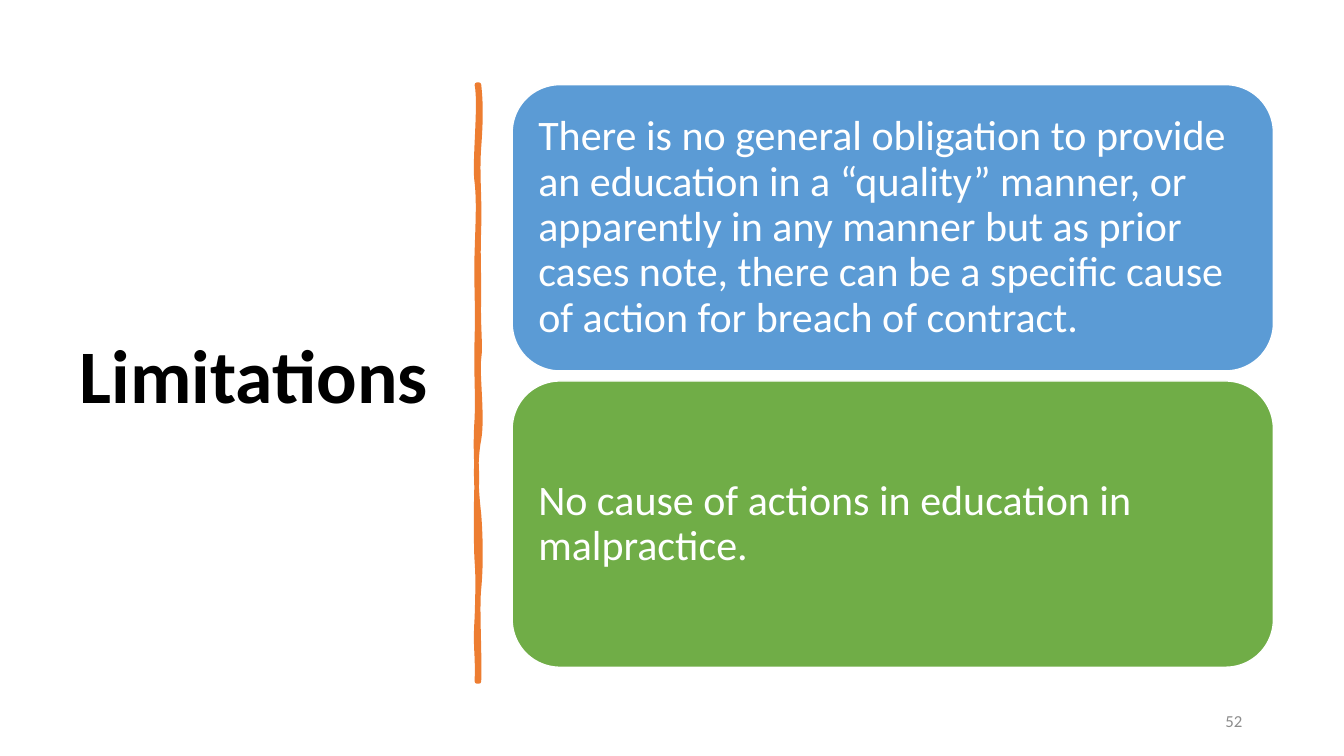
from dataclasses import dataclass

from lxml.etree import SubElement
from pptx import Presentation
from pptx.dml.color import RGBColor
from pptx.enum.shapes import MSO_SHAPE as Shape
from pptx.enum.text import MSO_ANCHOR as Anchor, MSO_AUTO_SIZE as AutoSize, PP_ALIGN as Align
from pptx.oxml.ns import qn
from pptx.util import Inches, Pt


@dataclass(frozen=True)
class Theme:
    font: str = "Calibri"
    black: str = "000000"
    white: str = "FFFFFF"
    grey: str = "8C8C8C"
    orange: str = "ED7D31"
    blue: str = "5B9BD5"
    green: str = "70AD47"
    title_size: int = 54
    card_size: int = 30
    number_size: int = 12


THEME = Theme()

# Content
TITLE = "Limitations"
PAGE_NUMBER = "52"
CARDS = [
    ("There is no general obligation to provide an education in a “quality” manner, "
     "or apparently in any manner but as prior cases note, there can be a specific "
     "cause of action for breach of contract.", THEME.blue),
    ("No cause of actions in education in malpractice.", THEME.green),
]

# Hand-drawn divider: start point, then curves of two controls and an end
DIVIDER_START = (4.75, 0.84)
DIVIDER_CURVES = [
    (4.77, 1.02, 4.77, 1.19, 4.75, 1.46),
    (4.73, 1.73, 4.76, 1.95, 4.75, 2.26),
    (4.74, 2.57, 4.75, 2.62, 4.75, 2.94),
    (4.74, 3.25, 4.77, 3.42, 4.75, 3.56),
    (4.73, 3.70, 4.79, 4.14, 4.75, 4.36),
    (4.71, 4.57, 4.72, 4.84, 4.75, 5.10),
    (4.77, 5.36, 4.77, 5.64, 4.75, 5.84),
    (4.73, 6.03, 4.76, 6.50, 4.75, 6.76),
    (4.74, 6.76, 4.73, 6.76, 4.73, 6.76),
    (4.74, 6.46, 4.71, 6.44, 4.73, 6.13),
    (4.74, 5.83, 4.74, 5.70, 4.73, 5.57),
    (4.72, 5.44, 4.72, 4.95, 4.73, 4.77),
    (4.73, 4.59, 4.71, 4.45, 4.73, 4.15),
    (4.74, 3.86, 4.72, 3.73, 4.73, 3.35),
    (4.74, 2.98, 4.72, 2.81, 4.73, 2.50),
    (4.74, 2.18, 4.75, 2.00, 4.73, 1.81),
    (4.70, 1.63, 4.77, 1.04, 4.73, 0.84),
    (4.74, 0.84, 4.74, 0.84, 4.75, 0.84),
]

# Layout, in inches
CARD_LEFT, CARD_TOP, CARD_W, CARD_H, CARD_GAP = 5.08, 0.84, 7.55, 2.84, 0.1


def rgb(value):
    return RGBColor.from_string(value)


def place(sp, *box):
    sp.left, sp.top, sp.width, sp.height = map(Inches, box)


def write(sp, text, *, size, color, bold=False, align=Align.LEFT, spacing=1.0, inset=None):
    tf = sp.text_frame
    tf.word_wrap = True
    tf.auto_size = AutoSize.NONE
    tf.vertical_anchor = Anchor.MIDDLE
    if inset is not None:
        tf.margin_left = tf.margin_top = tf.margin_right = tf.margin_bottom = Inches(inset)
    p = tf.paragraphs[0]
    p.alignment, p.line_spacing = align, spacing
    r = p.add_run()
    r.text = text
    r.font.name, r.font.size, r.font.bold = THEME.font, Pt(size), bold
    r.font.color.rgb = rgb(color)


def paint(sp, fill, line, width):
    sp.shadow.inherit = False
    sp.fill.solid()
    sp.fill.fore_color.rgb = rgb(fill)
    sp.line.color.rgb = rgb(line)
    sp.line.width = Pt(width)


def add_curves(s, start, curves):
    points = [(Inches(c[k]), Inches(c[k + 1])) for c in curves for k in (0, 2, 4)]
    builder = s.shapes.build_freeform(*map(Inches, start))
    builder.add_line_segments(points, close=True)
    sp = builder.convert_to_shape()
    # Turn every three straight segments into one Bézier curve
    segments = list(sp.element.iter(qn("a:lnTo")))
    outline = segments[0].getparent()
    close = outline.find(qn("a:close"))
    for k in range(0, len(segments), 3):
        curve = SubElement(outline, qn("a:cubicBezTo"))
        for segment in segments[k:k + 3]:
            curve.append(segment[0])
            outline.remove(segment)
    outline.append(close)
    return sp


def main():
    prs = Presentation()
    prs.slide_width, prs.slide_height = Inches(13.33), Inches(7.5)
    s = prs.slides.add_slide(prs.slide_layouts[5])

    # Title
    title = s.shapes.title
    place(title, 0.69, 0.7, 3.74, 6.11)
    write(title, TITLE, size=THEME.title_size, color=THEME.black, bold=True, spacing=0.9)

    # Divider
    divider = add_curves(s, DIVIDER_START, DIVIDER_CURVES)
    paint(divider, THEME.orange, THEME.orange, 3.25)

    # Page number
    number = s.shapes.add_textbox(*map(Inches, (9.42, 6.95, 3, 0.4)))
    write(number, PAGE_NUMBER, size=THEME.number_size, color=THEME.grey, align=Align.RIGHT)

    # Cards
    for i, (text, fill) in enumerate(CARDS):
        top = CARD_TOP + i * (CARD_H + CARD_GAP)
        card = s.shapes.add_shape(Shape.ROUNDED_RECTANGLE,
                                  *map(Inches, (CARD_LEFT, top, CARD_W, CARD_H)))
        paint(card, fill, THEME.white, 1)
        write(card, text, size=THEME.card_size, color=THEME.white, spacing=0.9, inset=0.12)

    prs.save("out.pptx")


if __name__ == "__main__":
    main()
